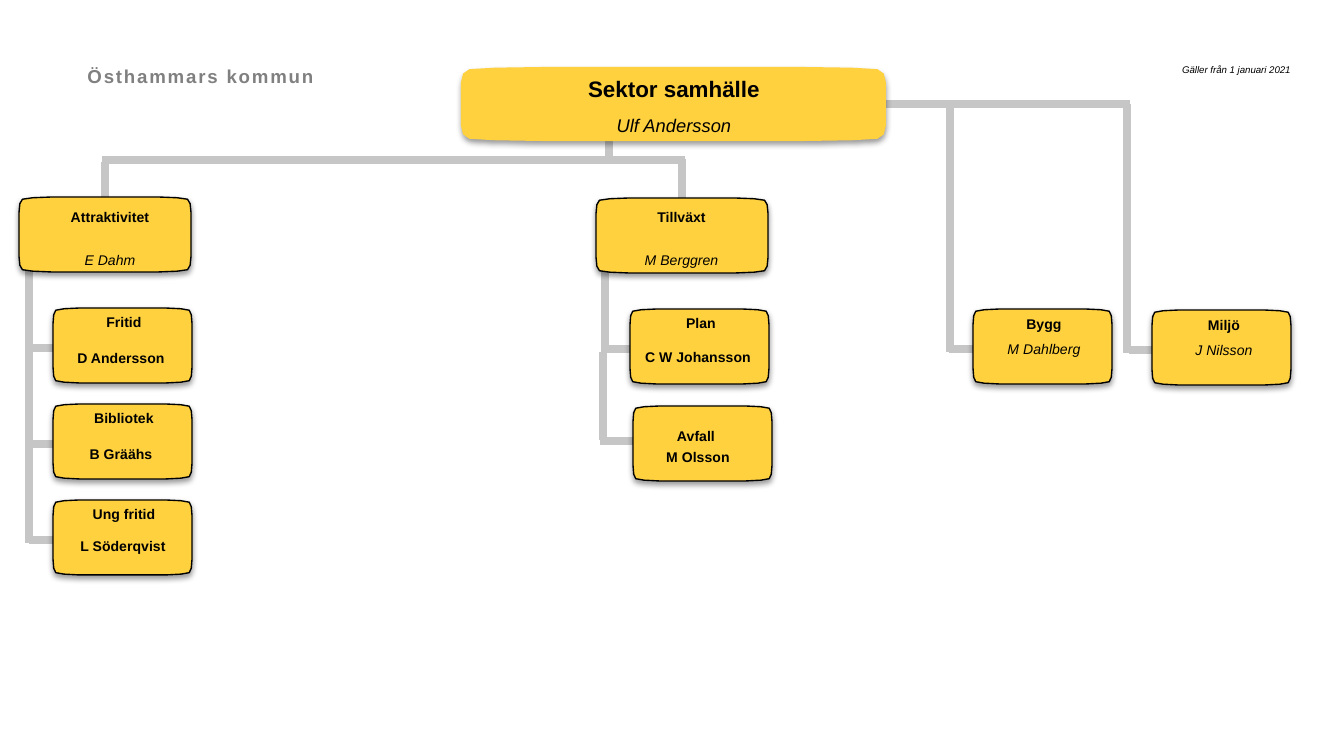
from lxml.etree import SubElement
from pptx import Presentation
from pptx.dml.color import RGBColor
from pptx.enum.shapes import MSO_CONNECTOR
from pptx.enum.text import MSO_ANCHOR, MSO_AUTO_SIZE, PP_ALIGN
from pptx.oxml.ns import qn
from pptx.util import Emu, Pt

SCALE = 914400 / 134.4
YELLOW = RGBColor(0xFF, 0xD1, 0x3F)
GREY = RGBColor(0xC6, 0xC6, 0xC6)
HEAD = RGBColor(0x80, 0x80, 0x80)
BLACK = RGBColor(0, 0, 0)

# Corner of a box as shares of its width and height, from top to left
CORNER = [(.19, 0), (.08, .01), (.02, .03), (.005, .09), (0, .21)]
UNIT = (139, 75)
AREA = (172, 75)

# Lines: x1, y1, x2, y2
RAILS = [
    (609, 121, 609, 161), (667, 104, 1130, 104),
    (102, 160, 685, 160), (105, 162, 105, 198), (682, 159, 682, 198),
    (605, 265, 605, 352), (603, 352, 603, 440),
    (29, 267, 29, 447), (29, 364, 29, 543),
    (950, 104, 950, 352), (1127, 104, 1127, 353),
]
STUB = 38
STUBS = [(29, 348), (29, 444), (29, 540), (606, 349), (600, 441),
         (949, 349), (1129, 350)]

# Units with name and leader apart: box corner, then corner of each label
UNITS = [
    (53, 308, "Fritid", (56, 314), "D Andersson", (53, 350)),
    (53, 404, "Bibliotek", (56, 410), "B Gräähs", (53, 446)),
    (53, 500, "Ung fritid", (56, 506), "L Söderqvist", (55, 538)),
    (630, 309, "Plan", (633, 315), "C W Johansson", (630, 349)),
    (633, 406, "Avfall", (628, 428), "M Olsson", (630, 449)),
]
# Cards with name and leader in one label: box, label, texts, gap in points
CARDS = [
    ((19, 197, *AREA), (32, 208, 156, 61), "Attraktivitet", "E Dahm", 10),
    ((596, 198, *AREA), (610, 208, 143, 61), "Tillväxt", "M Berggren", 10),
    ((973, 309, *UNIT), (976, 315, 136, 43), "Bygg", "M Dahlberg", .3),
    ((1152, 310, *UNIT), (1156, 316, 136, 43), "Miljö", "J Nilsson", .3),
]


def px(num):
    return Emu(round(num * SCALE))


def write(para, text, size=7.5, color=BLACK, bold=False, slant=False,
          space=None, raised=None):
    run = para.add_run()
    run.text = text
    font = run.font
    font.name, font.size = "Arial", Pt(size)
    font.bold, font.italic = bold, slant
    font.color.rgb = color
    for key, value in (("spc", space), ("baseline", raised)):
        if value:
            font._rPr.set(key, str(value))


def rail(slide, x1, y1, x2, y2):
    line = slide.shapes.add_connector(
        MSO_CONNECTOR.STRAIGHT, px(x1), px(y1), px(x2), px(y2))
    line.line.color.rgb = GREY
    line.line.width = Pt(4)
    SubElement(line._element.spPr, qn("a:effectLst"))


def cast(shape):
    """Give the shape a soft shadow straight below it."""
    shape.shadow.inherit = False
    effects = shape._element.spPr.find(qn("a:effectLst"))
    shade = SubElement(effects, qn("a:outerShdw"), blurRad=str(Pt(3.1)),
                       dist=str(Pt(1.6)), dir="5400000", rotWithShape="0")
    tone = SubElement(shade, qn("a:srgbClr"), val=str(BLACK))
    SubElement(tone, qn("a:alpha"), val="38000")


def box(slide, x, y, wide, high, edge=True):
    left = CORNER + [(u, 1 - v) for u, v in reversed(CORNER)]
    ring = left + [(1 - u, v) for u, v in reversed(left)]
    points = [(px(x + u * wide), px(y + v * high)) for u, v in ring]
    pen = slide.shapes.build_freeform(*points[0])
    pen.add_line_segments(points[1:], close=True)
    shape = pen.convert_to_shape()
    shape.fill.solid()
    shape.fill.fore_color.rgb = YELLOW
    if edge:
        shape.line.color.rgb = BLACK
        shape.line.width = Pt(.75)
    else:
        shape.line.fill.background()
    cast(shape)


def frame(slide, x, y, wide, high):
    text = slide.shapes.add_textbox(px(x), px(y), px(wide), px(high)).text_frame
    text.word_wrap = True
    text.auto_size = MSO_AUTO_SIZE.SHAPE_TO_FIT_TEXT
    return text


def label(slide, place, name, chief=None, gap=.3, sizes=(7.5, 7.5)):
    text = frame(slide, *place)
    text.margin_left = text.margin_right = 0
    text.margin_top = text.margin_bottom = 0
    write(text.paragraphs[0], name, size=sizes[0], bold=True)
    if chief:
        para = text.add_paragraph()
        para.space_before = Pt(gap)
        para.line_spacing = 1.5
        write(para, chief, size=sizes[1], slant=True)
    for para in text.paragraphs:
        para.alignment = PP_ALIGN.CENTER
        para._p.get_or_add_pPr().set("indent", str(-px(4)))


def header(slide):
    title = slide.shapes.title
    title.left, title.top = px(74), px(58)
    title.width, title.height = px(945), px(31)
    text = title.text_frame
    text.auto_size = MSO_AUTO_SIZE.NONE
    text.vertical_anchor = MSO_ANCHOR.TOP
    para = text.paragraphs[0]
    para.alignment = PP_ALIGN.LEFT
    write(para, "Östhammars kommun", size=10, color=HEAD, bold=True, space=100)
    note = frame(slide, 1169, 55, 174, 47)
    write(note.paragraphs[0], "Gäller från 1 januari 2021", size=9,
          slant=True, raised=30000)


def main():
    deck = Presentation()
    deck.slide_width, deck.slide_height = px(1344), px(756)
    slide = deck.slides.add_slide(deck.slide_layouts[5])
    header(slide)

    # Lines lie behind the boxes
    for ends in RAILS:
        rail(slide, *ends)
    for x, y in STUBS:
        rail(slide, x, y, x + STUB, y)

    # Sector
    box(slide, 461, 67, 425, 74, edge=False)
    label(slide, (520, 75, 308, 63), "Sektor samhälle", "Ulf Andersson",
          gap=.5, sizes=(12, 9.8))

    # Areas and units
    for place, spot, name, chief, gap in CARDS:
        box(slide, *place)
        label(slide, spot, name, chief, gap)
    for x, y, name, top, chief, low in UNITS:
        box(slide, x, y, *UNIT)
        label(slide, (*top, 136, 17), name)
        label(slide, (*low, 136, 17), chief)

    deck.save("out.pptx")


if __name__ == "__main__":
    main()
